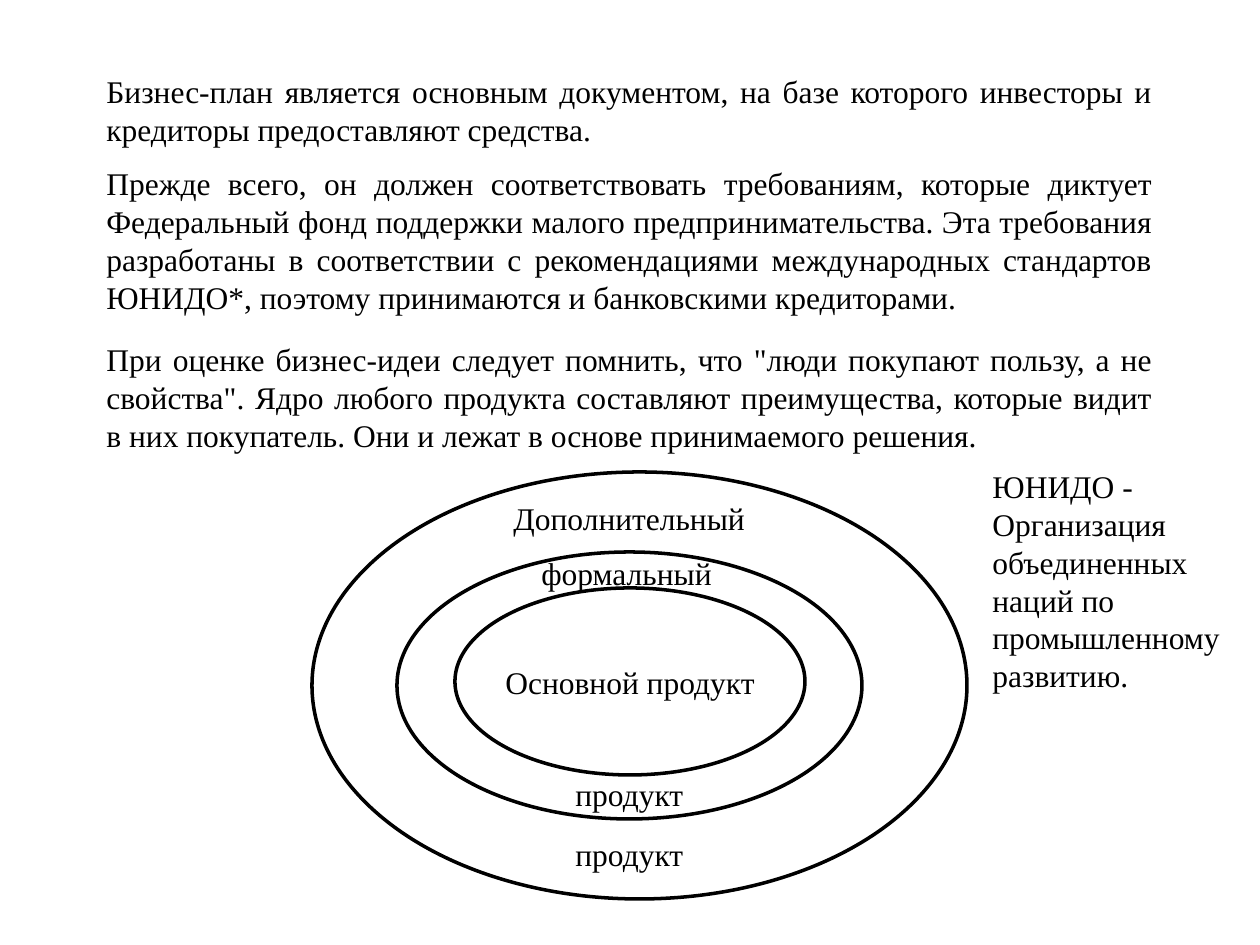
from pptx import Presentation
from pptx.dml.color import RGBColor
from pptx.enum.shapes import MSO_SHAPE
from pptx.enum.text import MSO_AUTO_SIZE, PP_ALIGN
from pptx.util import Emu, Pt

BLACK = RGBColor(0x00, 0x00, 0x00)
WHITE = RGBColor(0xFF, 0xFF, 0xFF)
FONT = "Times New Roman"
PIXELS_PER_INCH = 126

PARAGRAPHS = [
    (66, 89, "Бизнес-план является основным документом, на базе которого инвесторы и "
             "кредиторы предоставляют средства."),
    (158, 165, "Прежде всего, он должен соответствовать требованиям, которые диктует "
               "Федеральный фонд поддержки малого предпринимательства. Эта требования "
               "разработаны в соответствии с рекомендациями международных стандартов "
               "ЮНИДО*, поэтому принимаются и банковскими кредиторами."),
    (334, 127, 'При оценке бизнес-идеи следует помнить, что "люди покупают пользу, а не '
               'свойства". Ядро любого продукта составляют преимущества, которые видит '
               "в них покупатель. Они и лежат в основе принимаемого решения."),
]
PRODUCT_LEVELS = [(312, 472, 655, 427), (397, 552, 465, 267), (455, 588, 350, 187)]
LABELS = [
    (501, 493, 268, "Дополнительный"),
    (529, 548, 202, "формальный"),
    (493, 657, 276, "Основной продукт"),
    (563, 769, 134, "продукт"),
    (563, 829, 134, "продукт"),
]
FOOTNOTE = "ЮНИДО - Организация объединенных наций по промышленному развитию."


def px(length):
    """Turn pixels into EMU."""
    return Emu(round(length * 914400 / PIXELS_PER_INCH))


def write_text(paragraph, text, *, size=18, color=BLACK, font=FONT, align=PP_ALIGN.LEFT):
    """Put one formatted run into a paragraph."""
    paragraph.alignment = align
    run = paragraph.add_run()
    run.text = text
    run.font.size = Pt(size)
    run.font.name = font
    run.font.color.rgb = color


class SlideBuilder:
    """Holds the diagram style and the current slide."""

    def __init__(self, slide, line_color=BLACK, fill_color=WHITE, line_width=2):
        """Keep the slide and its style."""
        self.slide = slide
        self.line_color = line_color
        self.fill_color = fill_color
        self.line_width = line_width

    def text_box(self, left, top, width, height, text, wrap=True, **text_format):
        """Add a text box with one paragraph."""
        shape = self.slide.shapes.add_textbox(*map(px, (left, top, width, height)))
        frame = shape.text_frame
        frame.word_wrap = wrap
        frame.auto_size = MSO_AUTO_SIZE.SHAPE_TO_FIT_TEXT
        write_text(frame.paragraphs[0], text, **text_format)

    def ellipse(self, left, top, width, height):
        """Add an outlined ellipse."""
        shape = self.slide.shapes.add_shape(
            MSO_SHAPE.OVAL, *map(px, (left, top, width, height)))
        shape.shadow.inherit = False
        shape.fill.solid()
        shape.fill.fore_color.rgb = self.fill_color
        shape.line.color.rgb = self.line_color
        shape.line.width = Pt(self.line_width)


def main():
    """Build and save the slide."""
    presentation = Presentation()
    presentation.slide_width = px(1260)
    presentation.slide_height = px(945)
    slide = presentation.slides.add_slide(presentation.slide_layouts[6])
    builder = SlideBuilder(slide)

    for top, height, text in PARAGRAPHS:
        builder.text_box(94, top, 1071, height, text, align=PP_ALIGN.JUSTIFY)
    for bounds in PRODUCT_LEVELS:
        builder.ellipse(*bounds)
    for left, top, width, text in LABELS:
        builder.text_box(left, top, width, 50, text, wrap=False)
    builder.text_box(980, 461, 257, 242, FOOTNOTE)

    presentation.save("out.pptx")


if __name__ == "__main__":
    main()
